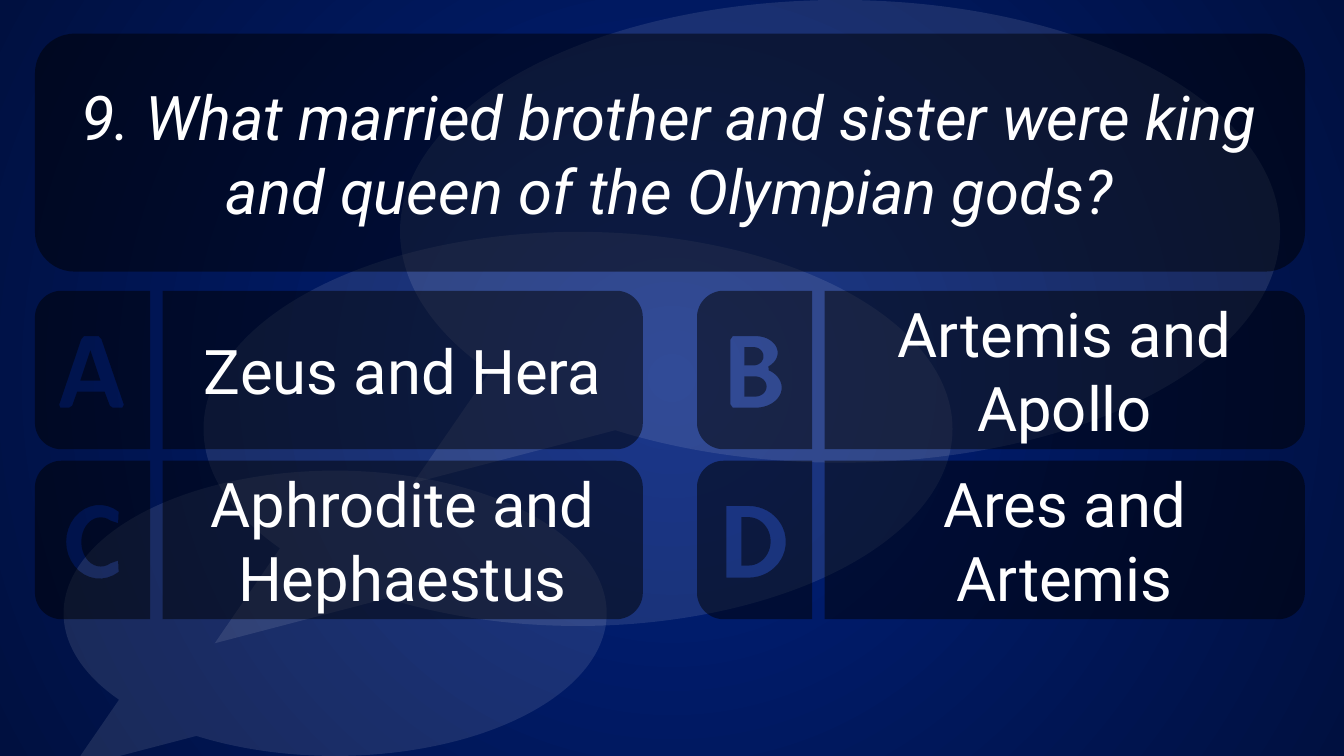
from dataclasses import dataclass
from math import cos, radians, sin

from lxml import etree
from pptx import Presentation, util as u
from pptx.dml import color
from pptx.enum import shapes, text
from pptx.oxml import ns

Point = tuple[float, float]
Contour = list[Point]


@dataclass(frozen=True)
class Theme:
    centre: str = "00217F"
    edge: str = "001040"
    bubble: str = "FFFFFF"
    panel: str = "000000"
    ink: str = "FFFFFF"
    bubble_alpha: int = 10
    panel_alpha: int = 50
    font: str = "Roboto"
    size: float = 44


@dataclass(frozen=True)
class Box:
    left: float
    top: float
    width: float
    height: float

    def emu(self) -> list[u.Length]:
        return [u.Pt(v) for v in (self.left, self.top, self.width, self.height)]


@dataclass(frozen=True)
class Choice:
    letter: str
    answer: str


THEME = Theme()
BUBBLES = [
    Box(45.4, 336.2, 388, 203.8),
    Box(145.4, 165.6, 535, 281.5),
    Box(285.8, 0, 628.6, 330.5),
]
QUESTION = "9. What married brother and sister were king and queen of the Olympian gods?"
QUESTION_BOX = Box(25, 24, 907.2, 170)
CHOICES = [
    Choice("A", "Zeus and Hera"),
    Choice("B", "Artemis and Apollo"),
    Choice("C", "Aphrodite and Hephaestus"),
    Choice("D", "Ares and Artemis"),
]

# Choice grid
COLUMNS = 2
GRID_LEFT, GRID_TOP = 25, 207.7
COLUMN_STEP, ROW_STEP = 472.9, 121.4
TAB_WIDTH, ANSWER_OFFSET, ANSWER_WIDTH = 82.2, 91.2, 343
CARD_HEIGHT, CORNER = 113.2, 19


def arc(cx: float, cy: float, rx: float, ry: float, start: float, end: float) -> Contour:
    """Points along an ellipse; angles in degrees, clockwise from the right."""
    steps = 24
    angles = [radians(start + (end - start) * i / steps) for i in range(steps + 1)]
    return [(cx + rx * cos(a), cy + ry * sin(a)) for a in angles]


def bowl(left: float, cx: float, cy: float, rx: float, ry: float) -> Contour:
    """A D-shaped outline with its straight side on the left."""
    return [(left, cy - ry), *arc(cx, cy, rx, ry, -90, 90), (left, cy + ry)]


def card(width: float, round_left: bool = False) -> Contour:
    """A card outline with two rounded corners on one side."""
    x = width - CORNER
    points = [
        (0, 0),
        *arc(x, CORNER, CORNER, CORNER, -90, 0),
        *arc(x, CARD_HEIGHT - CORNER, CORNER, CORNER, 0, 90),
        (0, CARD_HEIGHT),
    ]
    return [(width - px, py) for px, py in points] if round_left else points


# Letter cut-outs, in points from the corner of the tab
LETTERS: dict[str, list[Contour]] = {
    "A": [
        [(35, 32.4), (45.5, 32.4), (47.5, 34.6), (63.5, 81.4), (62.5, 83.5),
         (55.5, 83.5), (53.5, 82.1), (49.7, 72), (30.2, 72), (26.6, 82.1),
         (24.5, 83.5), (18, 83.5), (17.3, 81.4), (33.1, 34.6)],
        [(39.6, 42.5), (46.8, 64.1), (32.4, 64.1)],
    ],
    "B": [
        [(25.5, 32.4), *arc(42, 44.3, 15.6, 11.9, -90, 55),
         *arc(42, 69.2, 18.5, 14.3, -60, 90), (25.5, 83.5), (23.8, 81), (23.8, 35)],
        bowl(33.8, 40.5, 46.8, 7, 6.5),
        bowl(33.8, 41.5, 68.4, 8.2, 7.2),
    ],
    "C": [
        [*arc(46.1, 57.9, 23.8, 26.3, -55, -305), (59.4, 71.3),
         *arc(47, 58, 13.9, 17.6, 60, 300), (59.4, 44.6)],
    ],
    "D": [
        bowl(20.9, 37, 57.9, 26.4, 25.6),
        bowl(31.7, 36.7, 57.6, 15.9, 17.3),
    ],
}


def paint(sp, rgb: str, alpha: int) -> None:
    """Give a shape a translucent fill, no line and no shadow."""
    sp.shadow.inherit = False
    sp.line.fill.background()
    sp.fill.solid()
    sp.fill.fore_color.rgb = color.RGBColor.from_string(rgb)
    clr = sp.fill._xPr.find(".//" + ns.qn("a:srgbClr"))
    etree.SubElement(clr, ns.qn("a:alpha"), val=str(alpha * 1000))


def write(sp, words: str, italic: bool = False) -> None:
    tf = sp.text_frame
    tf.word_wrap = True
    tf.vertical_anchor = text.MSO_ANCHOR.MIDDLE
    p = tf.paragraphs[0]
    p.text = words
    p.alignment = text.PP_ALIGN.CENTER
    p.font.name = THEME.font
    p.font.size = u.Pt(THEME.size)
    p.font.italic = italic
    p.font.color.rgb = color.RGBColor.from_string(THEME.ink)


def add_card(s, left: float, top: float, contours: list[Contour]):
    """Draw contours as one panel; inner contours are holes."""
    placed = [[(u.Pt(left + x), u.Pt(top + y)) for x, y in c] for c in contours]
    builder = s.shapes.build_freeform(*placed[0][0], scale=1.0)
    for i, contour in enumerate(placed):
        if i:
            builder.move_to(*contour[0])
        builder.add_line_segments(contour[1:], close=True)
    sp = builder.convert_to_shape()
    paint(sp, THEME.panel, THEME.panel_alpha)
    return sp


def add_background(s) -> None:
    fill = s.background.fill
    fill.gradient()
    for stop, rgb, position in zip(fill.gradient_stops, (THEME.centre, THEME.edge), (0, 1)):
        stop.color.rgb = color.RGBColor.from_string(rgb)
        stop.position = position
    # Turn the linear gradient into a radial one
    grad = s.element.find(".//" + ns.qn("a:gradFill"))
    grad.remove(grad.find(ns.qn("a:lin")))
    radial = etree.Element(ns.qn("a:path"), path="circle")
    etree.SubElement(radial, ns.qn("a:fillToRect"), l="50000", t="50000", r="50000", b="50000")
    grad.find(ns.qn("a:gsLst")).addnext(radial)


def add_bubbles(s) -> None:
    group = s.shapes.add_group_shape()
    for box in BUBBLES:
        sp = group.shapes.add_shape(shapes.MSO_SHAPE.OVAL_CALLOUT, *box.emu())
        sp.adjustments[0], sp.adjustments[1] = -0.485, 0.544
        paint(sp, THEME.bubble, THEME.bubble_alpha)


def add_choice(s, index: int, choice: Choice) -> None:
    row, column = divmod(index, COLUMNS)
    left, top = GRID_LEFT + column * COLUMN_STEP, GRID_TOP + row * ROW_STEP
    add_card(s, left, top, [card(TAB_WIDTH, round_left=True), *LETTERS[choice.letter]])
    write(add_card(s, left + ANSWER_OFFSET, top, [card(ANSWER_WIDTH)]), choice.answer)


def main() -> None:
    prs = Presentation()
    prs.slide_width, prs.slide_height = u.Pt(960), u.Pt(540)
    s = prs.slides.add_slide(prs.slide_layouts[6])
    add_background(s)
    add_bubbles(s)
    # Answers
    for index, choice in enumerate(CHOICES):
        add_choice(s, index, choice)
    # Question
    sp = s.shapes.add_shape(shapes.MSO_SHAPE.ROUNDED_RECTANGLE, *QUESTION_BOX.emu())
    paint(sp, THEME.panel, THEME.panel_alpha)
    write(sp, QUESTION, italic=True)
    prs.save("out.pptx")


if __name__ == "__main__":
    main()
